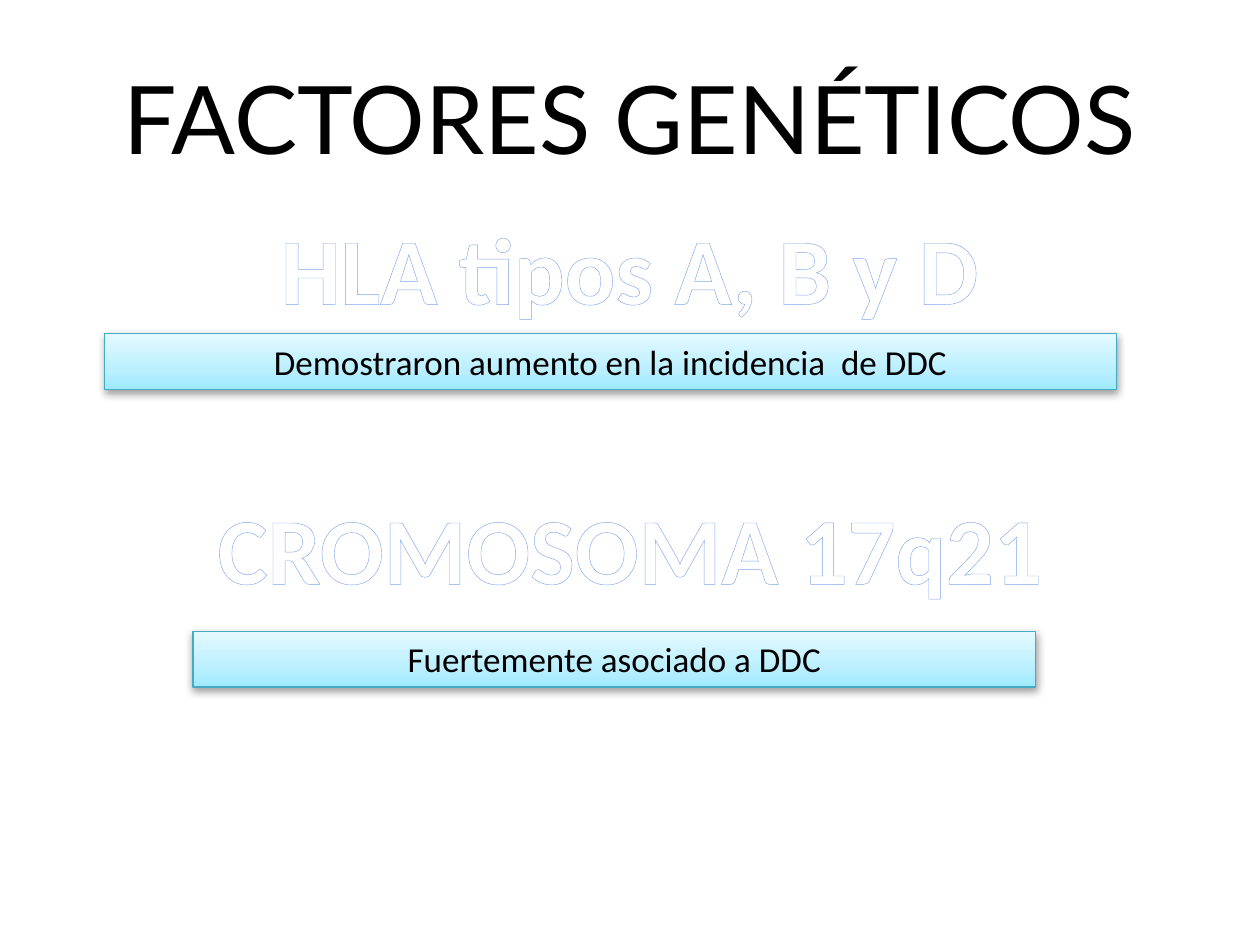
from lxml.etree import SubElement as Sub
from pptx import Presentation
from pptx.dml.color import RGBColor
from pptx.enum.shapes import MSO_SHAPE as Shape
from pptx.enum.text import MSO_ANCHOR as Anchor, MSO_AUTO_SIZE as Auto, PP_ALIGN as Align
from pptx.oxml import parse_xml
from pptx.oxml.ns import nsdecls, qn
from pptx.util import Cm, Pt

BLACK = RGBColor(0x00, 0x00, 0x00)
WHITE = RGBColor(0xFF, 0xFF, 0xFF)
TEAL = RGBColor(0x46, 0xAA, 0xC5)
BLUE = RGBColor(0x7E, 0xA6, 0xEA)
STOPS = [
    (0, RGBColor(0x9E, 0xEA, 0xFF)),
    (35, RGBColor(0xBB, 0xEF, 0xFF)),
    (100, RGBColor(0xE4, 0xF9, 0xFF)),
]

WIDE, HIGH = 25.4, 19.05
TITLE = "FACTORES GENÉTICOS"
FACTORS = [
    dict(head="HLA tipos A, B y D", top=4.11, wide=14.76,
         note="Demostraron aumento en la incidencia  de DDC", bar=(2.11, 6.73, 20.4, 1.12)),
    dict(head="CROMOSOMA 17q21", top=9.75, wide=17.6,
         note="Fuertemente asociado a DDC", bar=(3.89, 12.73, 16.99, 1.12)),
]


def write(shape, text, size, font="Calibri", color=BLACK, bold=False,
          wrap=True, anchor=Anchor.TOP, fit=Auto.NONE, edge=None):
    frame = shape.text_frame
    frame.word_wrap = wrap
    frame.auto_size = fit
    frame.vertical_anchor = anchor
    para = frame.paragraphs[0]
    para.alignment = Align.CENTER
    run = para.add_run()
    run.text = text
    run.font.size = Pt(size)
    run.font.name = font
    run.font.bold = bold
    run.font.color.rgb = color
    if edge is not None:
        run.font._element.insert(0, parse_xml(
            f'<a:ln {nsdecls("a")} w="{Pt(2.48)}"><a:solidFill>'
            f'<a:srgbClr val="{edge}"/></a:solidFill></a:ln>'))


def add_text(slide, box, text, **style):
    shape = slide.shapes.add_textbox(*map(Cm, box))
    write(shape, text, **style)


def add_bar(slide, box, text):
    bar = slide.shapes.add_shape(Shape.RECTANGLE, *map(Cm, box))
    bar.line.color.rgb = TEAL
    bar.line.width = Pt(0.75)
    bar.shadow.inherit = False
    bar.fill.gradient()
    props = bar._element.spPr
    grad = props.find(qn("a:gradFill"))
    stops = "".join(f'<a:gs pos="{pos * 1000}"><a:srgbClr val="{color}"/></a:gs>'
                    for pos, color in STOPS)
    props.replace(grad, parse_xml(
        f'<a:gradFill {nsdecls("a")} rotWithShape="1"><a:gsLst>{stops}</a:gsLst>'
        '<a:lin ang="16200000" scaled="1"/></a:gradFill>'))
    shade = Sub(props.find(qn("a:effectLst")), qn("a:outerShdw"), blurRad=str(Pt(5)),
                dist=str(Pt(1.6)), dir="5400000", rotWithShape="0")
    color = Sub(shade, qn("a:srgbClr"), val=str(BLACK))
    Sub(color, qn("a:alpha"), val="38000")
    write(bar, text, 20, fit=Auto.SHAPE_TO_FIT_TEXT)


def main():
    deck = Presentation()
    deck.slide_width, deck.slide_height = Cm(WIDE), Cm(HIGH)
    slide = deck.slides.add_slide(deck.slide_layouts[6])
    add_text(slide, (1.27, 0.76, 22.86, 3.18), TITLE, size=54, font="Lato",
             anchor=Anchor.MIDDLE)
    for item in FACTORS:
        left = (WIDE - item["wide"]) / 2
        add_text(slide, (left, item["top"], item["wide"], 2.57), item["head"], size=54,
                 color=WHITE, bold=True, wrap=False, fit=Auto.SHAPE_TO_FIT_TEXT, edge=BLUE)
        add_bar(slide, item["bar"], item["note"])
    deck.save("out.pptx")


if __name__ == "__main__":
    main()
